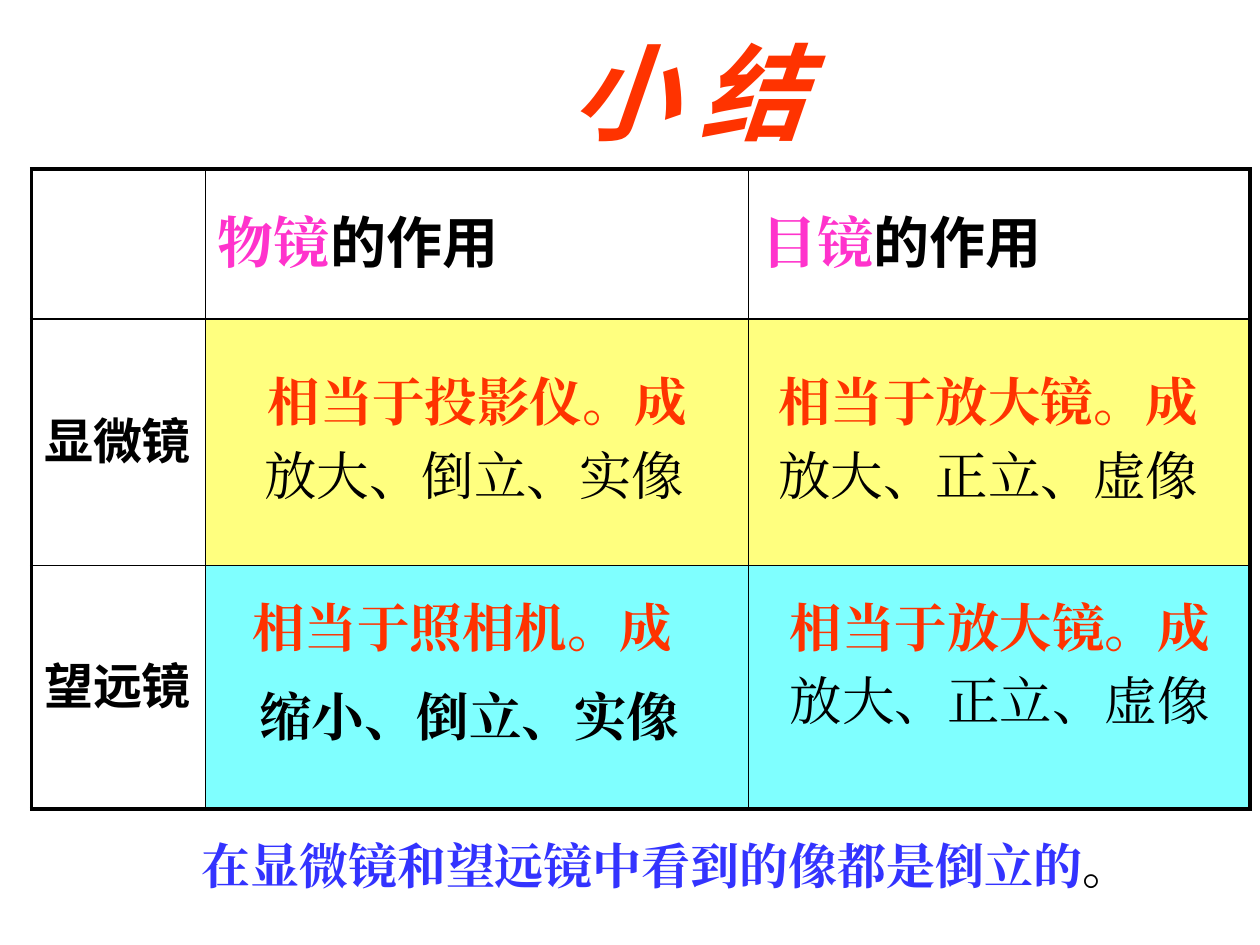
from dataclasses import dataclass

from lxml.etree import SubElement
from pptx import Presentation
from pptx.dml.color import RGBColor
from pptx.enum.text import MSO_ANCHOR, PP_ALIGN
from pptx.oxml.ns import qn
from pptx.util import Inches, Pt

BLACK, RED, PINK, BLUE = "000000", "FF3300", "FF33CC", "3333FF"
YELLOW, CYAN = "FFFF00", "00FFFF"
SERIF, SANS, CJK = "Times New Roman", "Arial", "Noto Sans CJK JP"
THIN, THICK = 1, 2.25


@dataclass
class Span:
    text: str
    color: str = BLACK
    size: float = 30
    font: str = SERIF
    bold: bool = True
    italic: bool = False


@dataclass
class Line:
    spans: list[Span]
    align: PP_ALIGN = PP_ALIGN.LEFT
    before: float = 0
    indent: float = 0


@dataclass
class Note:
    left: float
    top: float
    width: float
    height: float
    lines: list[Line]


def color_of(value: str) -> RGBColor:
    return RGBColor.from_string(value)


def write_lines(frame, lines: list[Line]) -> None:
    for index, line in enumerate(lines):
        para = frame.add_paragraph() if index else frame.paragraphs[0]
        para.alignment = line.align
        if line.before:
            para.space_before = Pt(line.before)
        if line.indent:
            para._p.get_or_add_pPr().set("marL", str(Inches(line.indent)))
        for span in line.spans:
            run = para.add_run()
            run.text = span.text
            formats = {"name": span.font, "size": Pt(span.size),
                       "bold": span.bold, "italic": span.italic}
            for name, value in formats.items():
                setattr(run.font, name, value)
            run.font.color.rgb = color_of(span.color)
            # The same typeface serves the Chinese characters
            SubElement(run._r.get_or_add_rPr(), qn("a:ea"), typeface=span.font)


def draw_note(page, note: Note) -> None:
    box = page.shapes.add_textbox(Inches(note.left), Inches(note.top),
                                  Inches(note.width), Inches(note.height))
    box.text_frame.word_wrap = True
    write_lines(box.text_frame, note.lines)


def set_borders(cell, widths: dict[str, float]) -> None:
    properties = cell._tc.get_or_add_tcPr()
    for position, (side, width) in enumerate(widths.items()):
        border = SubElement(properties, qn(f"a:ln{side}"), w=str(Pt(width)))
        fill = SubElement(border, qn("a:solidFill"))
        SubElement(fill, qn("a:srgbClr"), val=BLACK)
        properties.insert(position, border)


def fill_cell(cell, color: str | None) -> None:
    if color is None:
        cell.fill.background()
        return
    cell.fill.solid()
    cell.fill.fore_color.rgb = color_of(color)
    shade = cell._tc.tcPr.find(f".//{qn('a:srgbClr')}")
    SubElement(shade, qn("a:alpha"), val="50000")


def draw_table(page, widths: list[float], heights: list[float],
               texts: dict[tuple[int, int], list[Span]],
               row_fills: list[str | None]) -> None:
    table = page.shapes.add_table(
        len(heights), len(widths), Inches(0.25), Inches(1.34),
        Inches(sum(widths)), Inches(sum(heights))).table
    table.first_row = table.horz_banding = False
    for column, width in zip(table.columns, widths):
        column.width = Inches(width)
    last_row, last_column = len(heights) - 1, len(widths) - 1
    for r, height in enumerate(heights):
        table.rows[r].height = Inches(height)
        for c in range(len(widths)):
            cell = table.cell(r, c)
            cell.vertical_anchor = MSO_ANCHOR.MIDDLE
            fill_cell(cell, row_fills[r] if c else None)
            # Thick outer frame, thin inner rules
            outer = {"L": c == 0, "R": c == last_column,
                     "T": r == 0, "B": r == last_row}
            set_borders(cell, {side: THICK if edge else THIN
                               for side, edge in outer.items()})
            if (r, c) in texts:
                write_lines(cell.text_frame, [Line(texts[r, c])])


def heading(part: str) -> list[Span]:
    return [Span(part, PINK, 32), Span("的作用", size=32, font=SANS)]


def row_label(text: str) -> list[Span]:
    return [Span(text, size=28, font=SANS)]


def lens_note(left: float, top: float, width: float, device: str, image: str,
              align: PP_ALIGN = PP_ALIGN.JUSTIFY, before: float = 6,
              indent: float = 0, bold: bool = False, height: float = 1.2) -> Note:
    return Note(left, top, width, height, [
        Line([Span(f"相当于{device}。成", RED)], align),
        Line([Span(image, bold=bold)], PP_ALIGN.JUSTIFY, before, indent)])


def main() -> None:
    deck = Presentation()
    deck.slide_width, deck.slide_height = Inches(10), Inches(7.5)
    page = deck.slides.add_slide(deck.slide_layouts[6])

    # Comparison table
    draw_table(page, [1.38, 4.31, 3.98], [1.19, 1.96, 1.93],
               {(0, 1): heading("物镜"), (0, 2): heading("目镜"),
                (1, 0): row_label("显微镜"), (2, 0): row_label("望远镜")},
               [None, YELLOW, CYAN])

    # Title, lens notes over the coloured cells, conclusion
    microscope_top, telescope_top = 2.88, 4.67
    center = PP_ALIGN.CENTER
    upright = "放大、正立、虚像"
    notes = [
        Note(3.75, 0.17, 3.42, 1.1,
             [Line([Span("小 结", RED, 60, CJK, italic=True)], center)]),
        lens_note(2, microscope_top, 3.58, "投影仪", "放大、倒立、实像", center),
        lens_note(6.08, microscope_top, 3.66, "放大镜", upright),
        lens_note(1.67, telescope_top, 4, "照相机", "缩小、倒立、实像", center,
                  before=15, indent=0.29, bold=True, height=1.3),
        lens_note(6.17, telescope_top, 3.67, "放大镜", upright),
        Note(1.5, 6.58, 7.25, 0.57,
             [Line([Span("在显微镜和望远镜中看到的像都是倒立的", BLUE, 28),
                    Span("。", size=28)])]),
    ]
    for note in notes:
        draw_note(page, note)

    deck.save("out.pptx")


if __name__ == "__main__":
    main()
